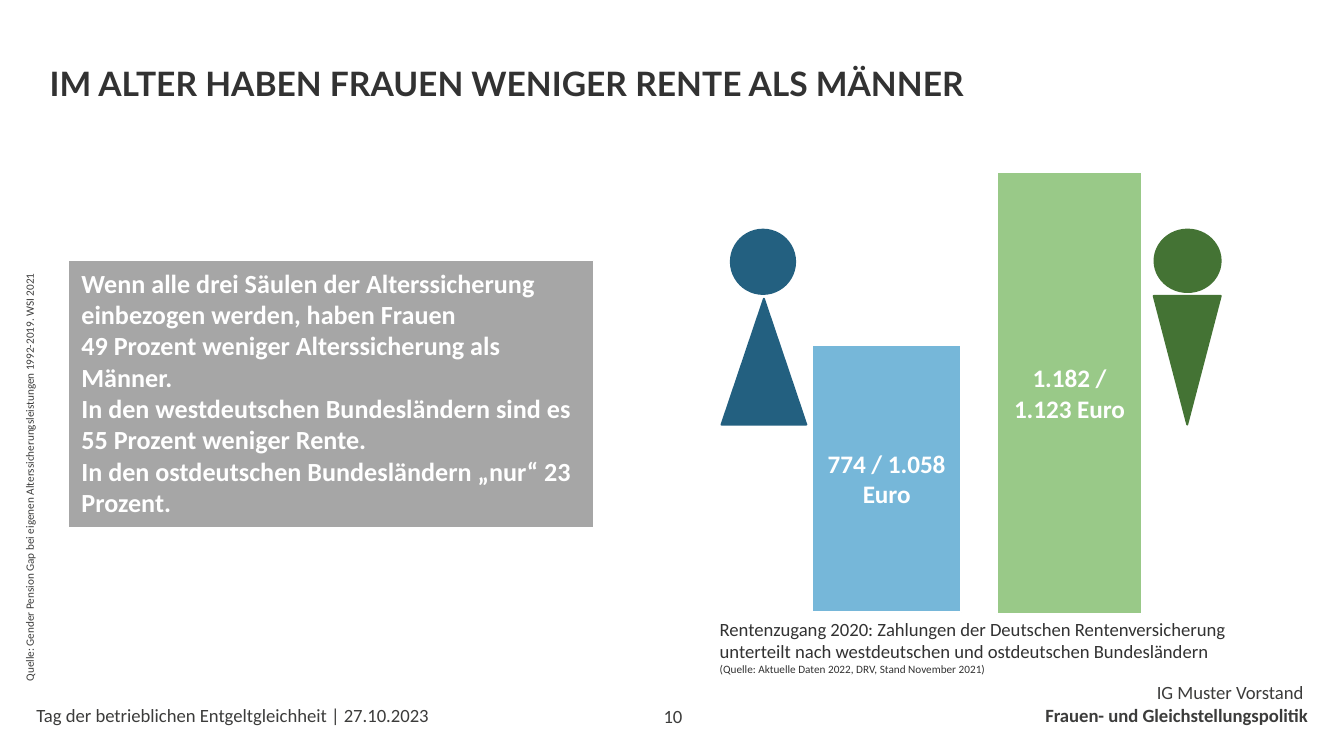
"""Builds the slide on the pension gap between women and men."""
from pptx import Presentation
from pptx import util as u
from pptx.dml.color import RGBColor
from pptx.enum import shapes, text

COLORS = {
    "white": "FFFFFF",
    "ink": "323232",
    "footer": "3C3C3B",
    "box": "A6A6A6",
    "women": "236080",
    "women_bar": "76B7D9",
    "men": "447334",
    "men_bar": "99C988",
}
ALIGN = text.PP_ALIGN
ANCHOR = text.MSO_ANCHOR
SHAPE = shapes.MSO_SHAPE


def color(name):
    """Return the named colour."""
    return RGBColor.from_string(COLORS[name])


def write(frame, lines, ink, align=ALIGN.LEFT, anchor=ANCHOR.TOP, font="Calibri"):
    """Fill a frame with (wording, size, bold) lines."""
    frame.word_wrap = True
    frame.vertical_anchor = anchor
    for index, (wording, size, bold) in enumerate(lines):
        paragraph = frame.add_paragraph() if index else frame.paragraphs[0]
        paragraph.text = wording
        paragraph.alignment = align
        for run in paragraph.runs:
            run.font.name = font
            run.font.size = u.Pt(size)
            run.font.bold = bold
            run.font.color.rgb = color(ink)


def add_label(slide, place, lines, ink="footer", inset=True, turn=0, **style):
    """Add a text box, with or without inner margins."""
    label = slide.shapes.add_textbox(*map(u.Pt, place))
    label.rotation = turn
    frame = label.text_frame
    if not inset:
        frame.margin_left = frame.margin_right = 0
        frame.margin_top = frame.margin_bottom = 0
    write(frame, lines, ink, **style)
    return label


def add_block(slide, kind, place, fill, line, weight=1):
    """Add a filled and outlined shape."""
    block = slide.shapes.add_shape(kind, *map(u.Pt, place))
    block.shadow.inherit = False
    block.fill.solid()
    block.fill.fore_color.rgb = color(fill)
    block.line.color.rgb = color(line)
    block.line.width = u.Pt(weight)
    return block


def add_bar(slide, place, fill, amount):
    """Add a bar with its amount in the middle."""
    bar = add_block(slide, SHAPE.RECTANGLE, place, fill, "white")
    write(bar.text_frame, [(amount, 13.5, True)], "white", ALIGN.CENTER, ANCHOR.MIDDLE)


def add_person(slide, head, body, fill, turn=0):
    """Add a figure made of a round head and a triangular body."""
    add_block(slide, SHAPE.OVAL, head, fill, fill)
    add_block(slide, SHAPE.ISOSCELES_TRIANGLE, body, fill, fill).rotation = turn


def add_footer(slide):
    """Add the event, the page number and the department."""
    add_label(slide, (19.5, 376.5, 280, 12.5),
              [("Tag der betrieblichen Entgeltgleichheit | 27.10.2023", 10, False)],
              inset=False, anchor=ANCHOR.BOTTOM)
    add_label(slide, (481.5, 365, 219, 24.5),
              [("IG Muster Vorstand ", 10, False),
               ("Frauen- und Gleichstellungspolitik", 10, True)],
              inset=False, align=ALIGN.RIGHT)
    page = add_label(slide, (325.5, 368.5, 70, 21.5), [("10", 10, False)],
                     inset=False, align=ALIGN.CENTER, anchor=ANCHOR.BOTTOM)
    page.text_frame.paragraphs[0].line_spacing = 0.9


def add_statement(slide):
    """Add the grey box with the key figures."""
    statements = (
        "Wenn alle drei Säulen der Alterssicherung einbezogen werden, haben Frauen",
        "49 Prozent weniger Alterssicherung als Männer.",
        "In den westdeutschen Bundesländern sind es 55 Prozent weniger Rente.",
        "In den ostdeutschen Bundesländern „nur“ 23 Prozent.",
    )
    box = add_block(slide, SHAPE.RECTANGLE, (36.5, 139.5, 281.5, 143.5), "box", "white", 0.75)
    write(box.text_frame, [(statement, 14, True) for statement in statements], "white")


def main():
    """Build and save the slide."""
    deck = Presentation()
    deck.slide_width, deck.slide_height = u.Pt(720), u.Pt(405)
    slide = deck.slides.add_slide(deck.slide_layouts[6])

    add_footer(slide)
    add_label(slide, (19.5, 30, 618, 29),
              [("IM ALTER HABEN FRAUEN WENIGER RENTE ALS MÄNNER", 18, True)],
              "ink", font="Lato")
    add_bar(slide, (534, 92, 78, 237), "men_bar", "1.182 / 1.123 Euro")
    add_person(slide, (618.5, 123, 35.5, 33.5), (618, 158.5, 36, 69), "men", 180)
    add_bar(slide, (435, 185, 80, 143), "women_bar", "774 / 1.058 Euro")
    add_person(slide, (391.5, 123, 34.5, 34.5), (386.5, 160, 45.5, 67.5), "women")
    add_statement(slide)
    source = add_label(slide, (-103, 229, 252, 20),
                       [("Quelle: Gender Pension Gap bei eigenen "
                         "Alterssicherungsleistungen 1992-2019. WSI 2021", 6, False)],
                       inset=False, turn=270)
    source.text_frame.paragraphs[0].line_spacing = 0.9
    add_label(slide, (378.5, 327.5, 307.5, 39),
              [("Rentenzugang 2020: Zahlungen der Deutschen Rentenversicherung "
                "unterteilt nach westdeutschen und ostdeutschen Bundesländern", 10, False),
               ("(Quelle: Aktuelle Daten 2022, DRV, Stand November 2021)", 6, False)],
              "ink")
    deck.save("out.pptx")


if __name__ == "__main__":
    main()
